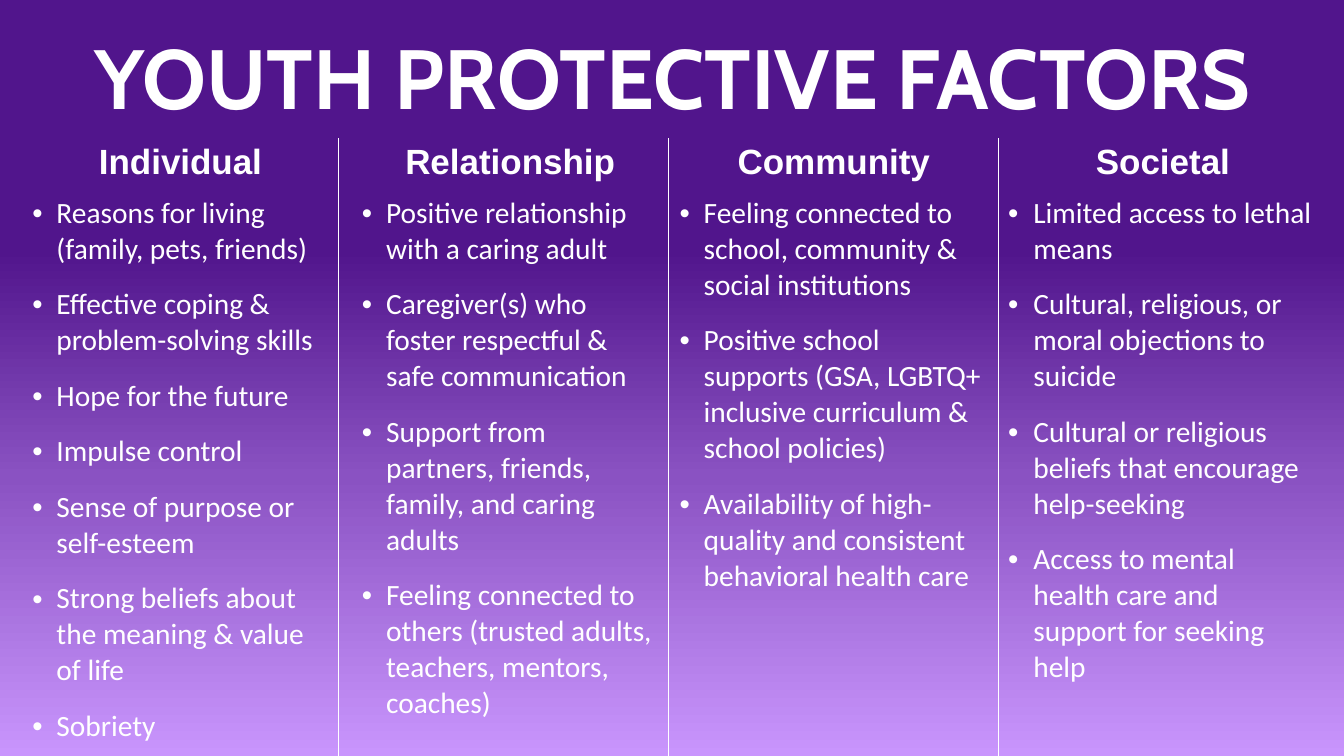
from copy import deepcopy
from dataclasses import dataclass

from lxml import etree
from pptx import Presentation
from pptx.dml.color import RGBColor
from pptx.enum.text import MSO_ANCHOR, PP_ALIGN
from pptx.oxml.ns import qn
from pptx.util import Inches, Pt

CENTER = PP_ALIGN.CENTER
LEFT = PP_ALIGN.LEFT
TOP = MSO_ANCHOR.TOP


@dataclass(frozen=True)
class Theme:
    white: str = "FFFFFF"
    fade: tuple = ((0, "C995FD"), (0.37, "8A52C2"), (0.67, "51158C"))
    title: tuple = ("Cabin", 60, True)
    head: tuple = ("Arial", 25, True)
    body: tuple = ("Calibri", 21, False)
    rule: float = 1


THEME = Theme()

# heading, heading indent, bullet margin, bullet hang, points
FACTORS = [
    ("Individual", 0.13, 0.37, 0.24, [
        "Reasons for living (family, pets, friends)",
        "Effective coping & problem-solving skills",
        "Hope for the future",
        "Impulse control",
        "Sense of purpose or self-esteem",
        "Strong beliefs about the meaning & value of life",
        "Sobriety",
    ]),
    ("Relationship", 0.13, 0.37, 0.24, [
        "Positive relationship with a caring adult",
        "Caregiver(s) who foster respectful & safe communication",
        "Support from partners, friends, family, and caring adults",
        "Feeling connected to others (trusted adults, teachers, mentors, coaches)",
    ]),
    ("Community", 0.01, 0.25, 0.24, [
        "Feeling connected to school, community & social institutions",
        "Positive school supports (GSA, LGBTQ+ inclusive curriculum & school policies)",
        "Availability of high-quality and consistent behavioral health care",
    ]),
    ("Societal", 0, 0.25, 0.25, [
        "Limited access to lethal means",
        "Cultural, religious, or moral objections to suicide",
        "Cultural or religious beliefs that encourage help-seeking",
        "Access to mental health care and support for seeking help",
    ]),
]


def paint(slide):
    fill = slide.background.fill
    fill.gradient()
    fill.gradient_angle = 90
    last = fill.gradient_stops[-1]._gs
    last.addprevious(deepcopy(last))
    for stop, (pos, color) in zip(fill.gradient_stops, THEME.fade):
        stop.position = pos
        stop.color.rgb = RGBColor.from_string(color)


def write(para, text, style, align):
    para.alignment = align
    run = para.add_run()
    run.text = text
    font = run.font
    font.name, size, font.bold = style
    font.size = Pt(size)
    font.color.rgb = RGBColor.from_string(THEME.white)


def indent(para, margin, hang=0):
    props = para._p.get_or_add_pPr()
    props.set("marL", str(Inches(margin)))
    props.set("indent", str(-Inches(hang)))
    return props


def bullet(para, margin, hang):
    props = indent(para, margin, hang)
    etree.SubElement(props, qn("a:buFont"), typeface="Arial")
    etree.SubElement(props, qn("a:buChar"), char="•")


def border(cell, sides):
    props = cell._tc.get_or_add_tcPr()
    for spot, side in enumerate("LRTB"):
        line = etree.Element(qn("a:ln" + side), w=str(Pt(THEME.rule)))
        if side in sides:
            solid = etree.SubElement(line, qn("a:solidFill"))
            etree.SubElement(solid, qn("a:srgbClr"), val=THEME.white)
        else:
            etree.SubElement(line, qn("a:noFill"))
        props.insert(spot, line)


def add_title(slide, left, top, width, height):
    box = slide.shapes.add_textbox(
        Inches(left), Inches(top), Inches(width), Inches(height))
    frame = box.text_frame
    frame.word_wrap = True
    write(frame.paragraphs[0], "YOUTH PROTECTIVE FACTORS", THEME.title, CENTER)


def add_grid(slide, left, top, width, rows):
    count = len(FACTORS)
    table = slide.shapes.add_table(
        len(rows), count, Inches(left), Inches(top),
        Inches(width), Inches(sum(rows))).table
    table.first_row = False
    table.horz_banding = False
    for row, height in zip(table.rows, rows):
        row.height = Inches(height)
    for col, (name, shift, margin, hang, points) in enumerate(FACTORS):
        table.columns[col].width = Inches(width / count)
        sides = ("L" if col else "") + ("R" if col < count - 1 else "")
        head, body = (table.cell(row, col) for row in range(len(rows)))
        for cell in (head, body):
            cell.fill.background()
            cell.vertical_anchor = TOP
            border(cell, sides)
        para = head.text_frame.paragraphs[0]
        indent(para, shift)
        write(para, name, THEME.head, CENTER)
        frame = body.text_frame
        for spot, point in enumerate(points):
            para = frame.add_paragraph() if spot else frame.paragraphs[0]
            bullet(para, margin, hang)
            if spot:
                para.space_before = Pt(6)
            para.space_after = Pt(8)
            write(para, point, THEME.body, LEFT)


def main():
    deck = Presentation()
    deck.slide_width, deck.slide_height = Inches(13.33), Inches(7.5)
    slide = deck.slides.add_slide(deck.slide_layouts[6])
    paint(slide)
    add_title(slide, 0.17, 0.2, 12.99, 1.11)
    add_grid(slide, 0.09, 1.37, 13.08, (0.51, 7.15))
    deck.save("out.pptx")


if __name__ == "__main__":
    main()
